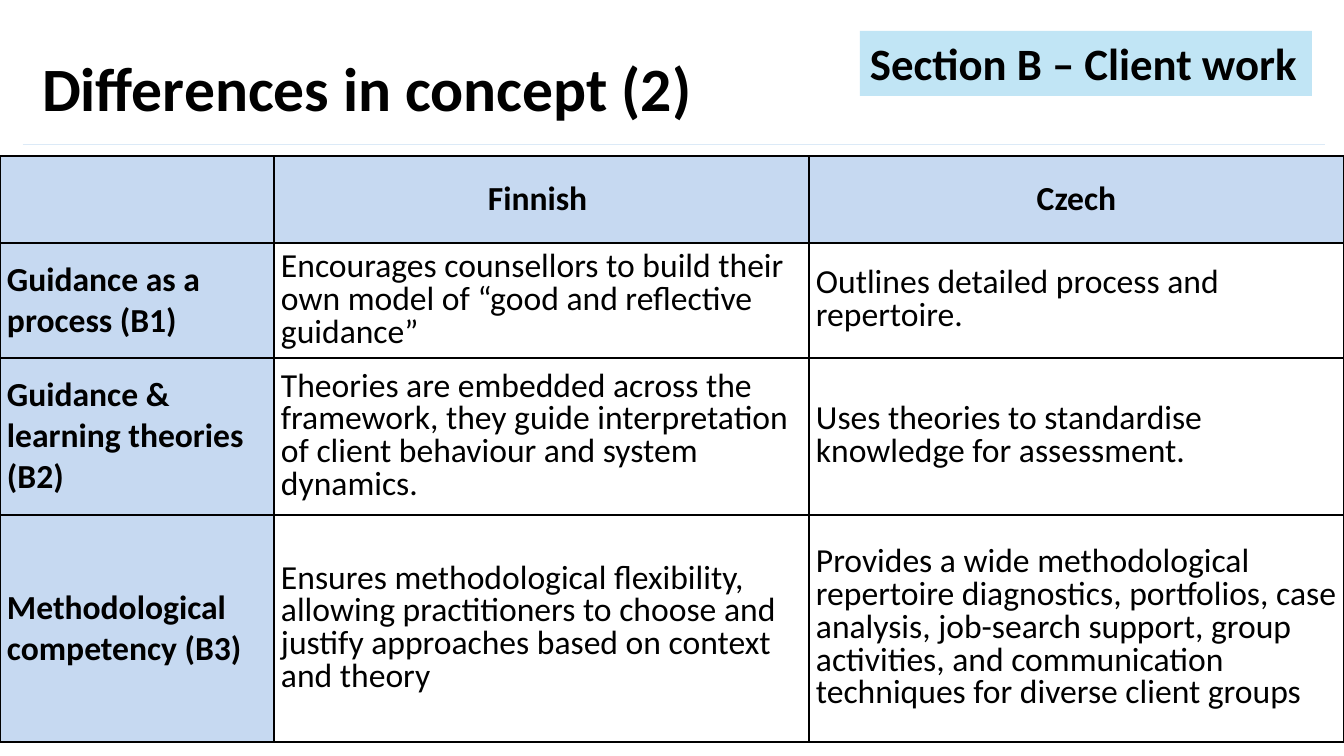
from dataclasses import dataclass

from lxml.etree import SubElement
from pptx import Presentation
from pptx.dml.color import RGBColor
from pptx.enum.shapes import MSO_CONNECTOR
from pptx.enum.text import MSO_ANCHOR, MSO_AUTO_SIZE, PP_ALIGN
from pptx.oxml.ns import qn
from pptx.slide import Slide
from pptx.table import _Cell
from pptx.text.text import _Paragraph
from pptx.util import Emu, Pt

PX_PER_INCH = 100.8
FONT = "Calibri"
COLORS = {
    "text": "000000",
    "border": "000000",
    "heading": "C6D9F1",
    "body": "FFFFFF",
    "badge": "C1E5F5",
    "rule": "DCEAF7",
}
COLUMN_WIDTHS = (274, 535, 535)
CELL_MARGIN = 7


@dataclass(frozen=True)
class Row:
    height: int
    topic: str
    finnish: str
    czech: str


ROWS = (
    Row(87, "", "Finnish ", "Czech"),
    Row(
        115,
        "Guidance as a process (B1)",
        "Encourages counsellors to build their own model of “good and reflective guidance”",
        "Outlines detailed process and repertoire.",
    ),
    Row(
        157,
        "Guidance & learning theories (B2)",
        "Theories are embedded across the framework, they guide interpretation "
        "of client behaviour and system dynamics.",
        "Uses theories to standardise knowledge for assessment.",
    ),
    Row(
        227,
        "Methodological competency (B3)",
        "Ensures methodological flexibility, allowing practitioners to choose and "
        "justify approaches based on context and theory",
        "Provides a wide methodological repertoire diagnostics, portfolios, case analysis, "
        "job-search support, group activities, and communication techniques "
        "for diverse client groups",
    ),
)


def px(n: int) -> Emu:
    return Emu(round(n * 914400 / PX_PER_INCH))


def color(name: str) -> RGBColor:
    return RGBColor.from_string(COLORS[name])


def format_text(p: _Paragraph, size: int, bold: bool = True) -> None:
    for r in p.runs:
        r.font.name = FONT
        r.font.size = Pt(size)
        r.font.bold = bold
        r.font.color.rgb = color("text")


def add_borders(cell: _Cell) -> None:
    tc_pr = cell._tc.get_or_add_tcPr()
    for side in ("lnL", "lnR", "lnT", "lnB"):
        ln = SubElement(tc_pr, qn(f"a:{side}"), w=str(Pt(1)))
        fill = SubElement(ln, qn("a:solidFill"))
        SubElement(fill, qn("a:srgbClr"), val=COLORS["border"])


def fill_cell(cell: _Cell, text: str, is_header: bool, is_topic: bool) -> None:
    heading = is_header or is_topic
    add_borders(cell)
    cell.fill.solid()
    cell.fill.fore_color.rgb = color("heading" if heading else "body")
    cell.vertical_anchor = MSO_ANCHOR.MIDDLE
    cell.margin_left = cell.margin_right = px(CELL_MARGIN)
    cell.margin_top = cell.margin_bottom = 0
    cell.text_frame.text = text
    p = cell.text_frame.paragraphs[0]
    if is_header:
        p.alignment = PP_ALIGN.CENTER
    if not heading:
        p.line_spacing = 0.8
    format_text(p, 24, heading)


def add_title(s: Slide) -> None:
    sp = s.shapes.title
    sp.left, sp.top, sp.width, sp.height = px(32), px(40), px(1312), px(103)
    tf = sp.text_frame
    tf.text = "Differences in concept (2)"
    tf.auto_size = MSO_AUTO_SIZE.NONE
    tf.vertical_anchor = MSO_ANCHOR.MIDDLE
    p = tf.paragraphs[0]
    p.alignment = PP_ALIGN.LEFT
    p.line_spacing = 0.9
    format_text(p, 44)


def add_rule(s: Slide) -> None:
    line = s.shapes.add_connector(MSO_CONNECTOR.STRAIGHT, px(23), px(144), px(1325), px(144))
    line.line.color.rgb = color("rule")
    line.line.width = Pt(0.5)
    SubElement(line._element.spPr, qn("a:effectLst"))


def add_comparison(s: Slide) -> None:
    height = sum(row.height for row in ROWS)
    table = s.shapes.add_table(
        len(ROWS), len(COLUMN_WIDTHS), 0, px(156), px(sum(COLUMN_WIDTHS)), px(height)
    ).table
    table.first_row = table.horz_banding = False
    for column, width in zip(table.columns, COLUMN_WIDTHS):
        column.width = px(width)
    for i, row in enumerate(ROWS):
        table.rows[i].height = px(row.height)
        for j, text in enumerate((row.topic, row.finnish, row.czech)):
            fill_cell(table.cell(i, j), text, i == 0, j == 0)


def add_badge(s: Slide) -> None:
    sp = s.shapes.add_textbox(px(860), px(31), px(452), px(65))
    sp.fill.solid()
    sp.fill.fore_color.rgb = color("badge")
    tf = sp.text_frame
    tf.text = "Section B – Client work"
    tf.word_wrap = False
    tf.auto_size = MSO_AUTO_SIZE.SHAPE_TO_FIT_TEXT
    format_text(tf.paragraphs[0], 32)


def main() -> None:
    prs = Presentation()
    prs.slide_width, prs.slide_height = px(1344), px(756)
    s = prs.slides.add_slide(prs.slide_layouts.get_by_name("Title Only"))

    # Heading
    add_title(s)
    add_rule(s)

    # Framework comparison
    add_comparison(s)

    # Section label
    add_badge(s)

    prs.save("out.pptx")


if __name__ == "__main__":
    main()
